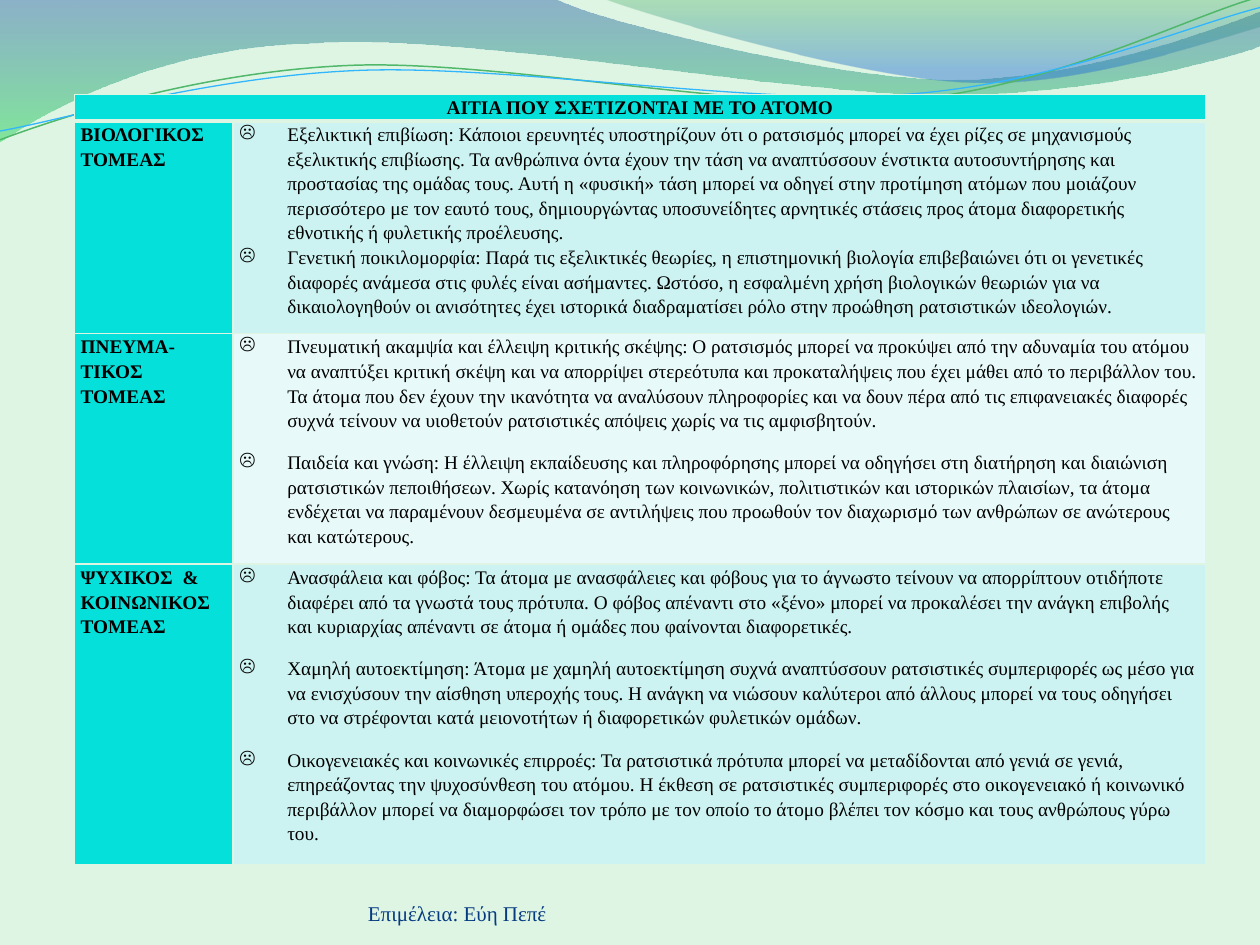
from dataclasses import dataclass

from lxml.etree import SubElement
from pptx import Presentation
from pptx.dml.color import RGBColor
from pptx.enum.text import MSO_ANCHOR, PP_ALIGN
from pptx.oxml.ns import qn
from pptx.util import Inches, Pt


@dataclass(frozen=True)
class Theme:
    font: str = "Times New Roman"
    background: str = "DEF5E4"
    accent: str = "05E0DB"
    bands: tuple = ("CCF3F1", "E7F9F8")
    ink: str = "000000"
    credit_ink: str = "073B81"
    table_size: int = 11
    credit_size: int = 12
    line_spacing: float = 1.15
    paragraph_gap: int = 10


THEME = Theme()

# Each wave: start point, then Bézier segments (six numbers) or lines (two)
LEFT_WAVE = [(0, 0), (4.4, -0.01), (4.76, 0.17, 6.64, 0.63, 7.58, 0.63),
             (8.53, 0.63, 9.58, 0.26, 10, 0.09), (10.01, 0.36),
             (9.83, 0.44, 8.7, 0.76, 7.46, 0.75),
             (6.22, 0.75, 3.82, 0.28, 2.57, 0.34),
             (1.29, 0.36, 0.46, 0.83, -0.01, 1.13)]
RIGHT_WAVE = [(0, 0), (0.3, 0.12, 2.03, 0.63, 2.9, 0.66),
              (3.77, 0.7, 4.82, 0.33, 5.21, 0.22), (5.21, 0.01)]
GREEN_CURVE = [(0, 1.11), (0.48, 0.93, 1.58, 0.57, 2.77, 0.52),
               (3.95, 0.47, 5.93, 0.89, 7.13, 0.8),
               (8.33, 0.71, 9.38, 0.15, 9.98, -0.02)]
BLUE_CURVE = [(0, 1.04), (0.47, 0.96, 1.64, 0.61, 2.83, 0.56),
              (4.03, 0.51, 5.97, 0.84, 7.17, 0.75),
              (8.36, 0.67, 9.41, 0.21, 10, 0.06)]

HEADING = "AITIA ΠΟΥ ΣΧΕΤΙΖΟΝΤΑΙ ΜΕ ΤΟ ΑΤΟΜΟ"

# Sector paragraphs, cause paragraphs, gap after each cause in points, row height
SECTORS = [
    (["ΒΙΟΛΟΓΙΚΟΣ ΤΟΜΕΑΣ"],
     ["Εξελικτική επιβίωση: Κάποιοι ερευνητές υποστηρίζουν ότι ο ρατσισμός μπορεί να έχει ρίζες σε "
      "μηχανισμούς εξελικτικής επιβίωσης. Τα ανθρώπινα όντα έχουν την τάση να αναπτύσσουν ένστικτα "
      "αυτοσυντήρησης και προστασίας της ομάδας τους. Αυτή η «φυσική» τάση μπορεί να οδηγεί στην "
      "προτίμηση ατόμων που μοιάζουν περισσότερο με τον εαυτό τους, δημιουργώντας υποσυνείδητες "
      "αρνητικές στάσεις προς άτομα διαφορετικής εθνοτικής ή φυλετικής προέλευσης.",
      "Γενετική ποικιλομορφία: Παρά τις εξελικτικές θεωρίες, η επιστημονική βιολογία επιβεβαιώνει ότι "
      "οι γενετικές διαφορές ανάμεσα στις φυλές είναι ασήμαντες. Ωστόσο, η εσφαλμένη χρήση βιολογικών "
      "θεωριών για να δικαιολογηθούν οι ανισότητες έχει ιστορικά διαδραματίσει ρόλο στην προώθηση "
      "ρατσιστικών ιδεολογιών."],
     0, 1.66),
    (["ΠΝΕΥΜΑ-ΤΙΚΟΣ", "ΤΟΜΕΑΣ"],
     ["Πνευματική ακαμψία και έλλειψη κριτικής σκέψης: Ο ρατσισμός μπορεί να προκύψει από την αδυναμία "
      "του ατόμου να αναπτύξει κριτική σκέψη και να απορρίψει στερεότυπα και προκαταλήψεις που έχει "
      "μάθει από το περιβάλλον του. Τα άτομα που δεν έχουν την ικανότητα να αναλύσουν πληροφορίες και "
      "να δουν πέρα από τις επιφανειακές διαφορές συχνά τείνουν να υιοθετούν ρατσιστικές απόψεις χωρίς "
      "να τις αμφισβητούν.",
      "Παιδεία και γνώση: Η έλλειψη εκπαίδευσης και πληροφόρησης μπορεί να οδηγήσει στη διατήρηση και "
      "διαιώνιση ρατσιστικών πεποιθήσεων. Χωρίς κατανόηση των κοινωνικών, πολιτιστικών και ιστορικών "
      "πλαισίων, τα άτομα ενδέχεται να παραμένουν δεσμευμένα σε αντιλήψεις που προωθούν τον διαχωρισμό "
      "των ανθρώπων σε ανώτερους και κατώτερους."],
     THEME.paragraph_gap, 1.83),
    (["ΨΥΧΙΚΟΣ  & ΚΟΙΝΩΝΙΚΟΣ ΤΟΜΕΑΣ"],
     ["Ανασφάλεια και φόβος: Τα άτομα με ανασφάλειες και φόβους για το άγνωστο τείνουν να απορρίπτουν "
      "οτιδήποτε διαφέρει από τα γνωστά τους πρότυπα. Ο φόβος απέναντι στο «ξένο» μπορεί να προκαλέσει "
      "την ανάγκη επιβολής και κυριαρχίας απέναντι σε άτομα ή ομάδες που φαίνονται διαφορετικές.",
      "Χαμηλή αυτοεκτίμηση: Άτομα με χαμηλή αυτοεκτίμηση συχνά αναπτύσσουν ρατσιστικές συμπεριφορές ως "
      "μέσο για να ενισχύσουν την αίσθηση υπεροχής τους. Η ανάγκη να νιώσουν καλύτεροι από άλλους "
      "μπορεί να τους οδηγήσει στο να στρέφονται κατά μειονοτήτων ή διαφορετικών φυλετικών ομάδων.",
      "Οικογενειακές και κοινωνικές επιρροές: Τα ρατσιστικά πρότυπα μπορεί να μεταδίδονται από γενιά σε "
      "γενιά, επηρεάζοντας την ψυχοσύνθεση του ατόμου. Η έκθεση σε ρατσιστικές συμπεριφορές στο "
      "οικογενειακό ή κοινωνικό περιβάλλον μπορεί να διαμορφώσει τον τρόπο με τον οποίο το άτομο βλέπει "
      "τον κόσμο και τους ανθρώπους γύρω του."],
     THEME.paragraph_gap, 2.23),
]


def rgb(color):
    return RGBColor.from_string(color)


def add_curve(slide, left, top, segments, closed):
    """Draw straight lines through every control point, then bend them into Béziers."""
    start, *rest = [(left + Inches(x), top + Inches(y))
                    for segment in segments for x, y in zip(segment[::2], segment[1::2])]
    builder = slide.shapes.build_freeform(*start)
    builder.add_line_segments(rest, close=closed)
    curve = builder.convert_to_shape()
    curve.shadow.inherit = False
    lines = iter(list(curve._element.iter(qn("a:lnTo"))))
    for segment in segments[1:]:
        first, *others = [next(lines) for _ in segment[::2]]
        if others:
            first.tag = qn("a:cubicBezTo")
            for line in others:
                first.append(line[0])
                line.getparent().remove(line)
    return curve


def add_wave(slide, left, top, segments, stops):
    wave = add_curve(slide, left, top, segments, closed=True)
    wave.line.fill.background()
    wave.fill.gradient()
    wave.fill.gradient_angle = 270
    for stop, (position, color, _) in zip(wave.fill.gradient_stops, stops):
        stop.position = position
        stop.color.rgb = rgb(color)
    colors = wave._element.spPr.iter(qn("a:srgbClr"))
    for color, (_, _, opacity) in zip(colors, stops):
        SubElement(color, qn("a:alpha"), val=str(opacity * 1000))


def add_header_waves(slide, left, top):
    add_wave(slide, left, top, LEFT_WAVE, [(0, "2960A7", 45), (1, "35DA5E", 55)])
    add_wave(slide, left + Inches(4.79), top - Inches(0.01), RIGHT_WAVE,
             [(0, "36A752", 30), (0.8, "2472D3", 45)])
    for segments, color, width in ((GREEN_CURVE, "50B86A", 0.85), (BLUE_CURVE, "31B6FD", 0.75)):
        curve = add_curve(slide, left, top, segments, closed=False)
        curve.fill.background()
        curve.line.color.rgb = rgb(color)
        curve.line.width = Pt(width)


def format_run(run, size, color, bold=False):
    run.font.name = THEME.font
    run.font.size = Pt(size)
    run.font.bold = bold
    run.font.color.rgb = rgb(color)


def add_credit(slide, left, top, width, height):
    credit = slide.shapes.add_textbox(left, top, width, height).text_frame
    credit.word_wrap = True
    credit.vertical_anchor = MSO_ANCHOR.BOTTOM
    credit.margin_left = credit.margin_right = credit.margin_top = credit.margin_bottom = 0
    credit.text = "Επιμέλεια: Εύη Πεπέ"
    format_run(credit.paragraphs[0].runs[0], THEME.credit_size, THEME.credit_ink)


def style_cell(cell, fill, bottom=1):
    cell.margin_left = cell.margin_right = Inches(0.05)
    cell.margin_top = cell.margin_bottom = 0
    properties = cell._tc.get_or_add_tcPr()
    for side, width in (("L", 1), ("R", 1), ("T", 1), ("B", bottom)):
        border = SubElement(properties, qn(f"a:ln{side}"), w=str(Pt(width)))
        SubElement(SubElement(border, qn("a:solidFill")), qn("a:srgbClr"), val=THEME.background)
    cell.fill.solid()
    cell.fill.fore_color.rgb = rgb(fill)


def write_cell(cell, texts, bold=False, bullet=None, gap=0):
    cell.text_frame.text = "\n".join(texts)
    paragraphs = cell.text_frame.paragraphs
    for paragraph in paragraphs:
        paragraph.line_spacing = THEME.line_spacing
        paragraph.space_after = Pt(0 if paragraph is paragraphs[-1] else gap)
        format_run(paragraph.runs[0], THEME.table_size, THEME.ink, bold)
        if bullet:
            properties = paragraph._p.get_or_add_pPr()
            properties.set("marL", str(Inches(0.38)))
            properties.set("indent", str(-Inches(0.38)))
            SubElement(properties, qn("a:buChar"), char=bullet)


def add_causes_table(slide, left, top, width, height):
    table = slide.shapes.add_table(len(SECTORS) + 1, 2, left, top, width, height).table
    table.columns[0].width = Inches(1.26)
    table.columns[1].width = width - Inches(1.26)

    # Heading across both columns
    table.rows[0].height = Inches(0.18)
    for cell in table.rows[0].cells:
        style_cell(cell, THEME.accent, bottom=3)
    heading = table.cell(0, 0)
    heading.merge(table.cell(0, 1))
    write_cell(heading, [HEADING], bold=True)
    heading.text_frame.paragraphs[0].alignment = PP_ALIGN.CENTER

    # One row for each sector
    for row, (sector, causes, gap, row_height) in enumerate(SECTORS, start=1):
        table.rows[row].height = Inches(row_height)
        fills = (THEME.accent, THEME.bands[(row - 1) % 2])
        for cell, fill in zip(table.rows[row].cells, fills):
            style_cell(cell, fill)
        write_cell(table.cell(row, 0), sector, bold=True)
        write_cell(table.cell(row, 1), causes, bullet="☹", gap=gap)


def main():
    deck = Presentation()
    deck.slide_width, deck.slide_height = Inches(10), Inches(7.5)
    slide = deck.slides.add_slide(deck.slide_layouts[6])
    slide.background.fill.solid()
    slide.background.fill.fore_color.rgb = rgb(THEME.background)
    add_header_waves(slide, Inches(0), Inches(0))
    add_credit(slide, Inches(2.92), Inches(6.95), Inches(3.67), Inches(0.4))
    add_causes_table(slide, Inches(0.59), Inches(0.75), Inches(8.98), Inches(5.9))
    deck.save("out.pptx")


if __name__ == "__main__":
    main()
